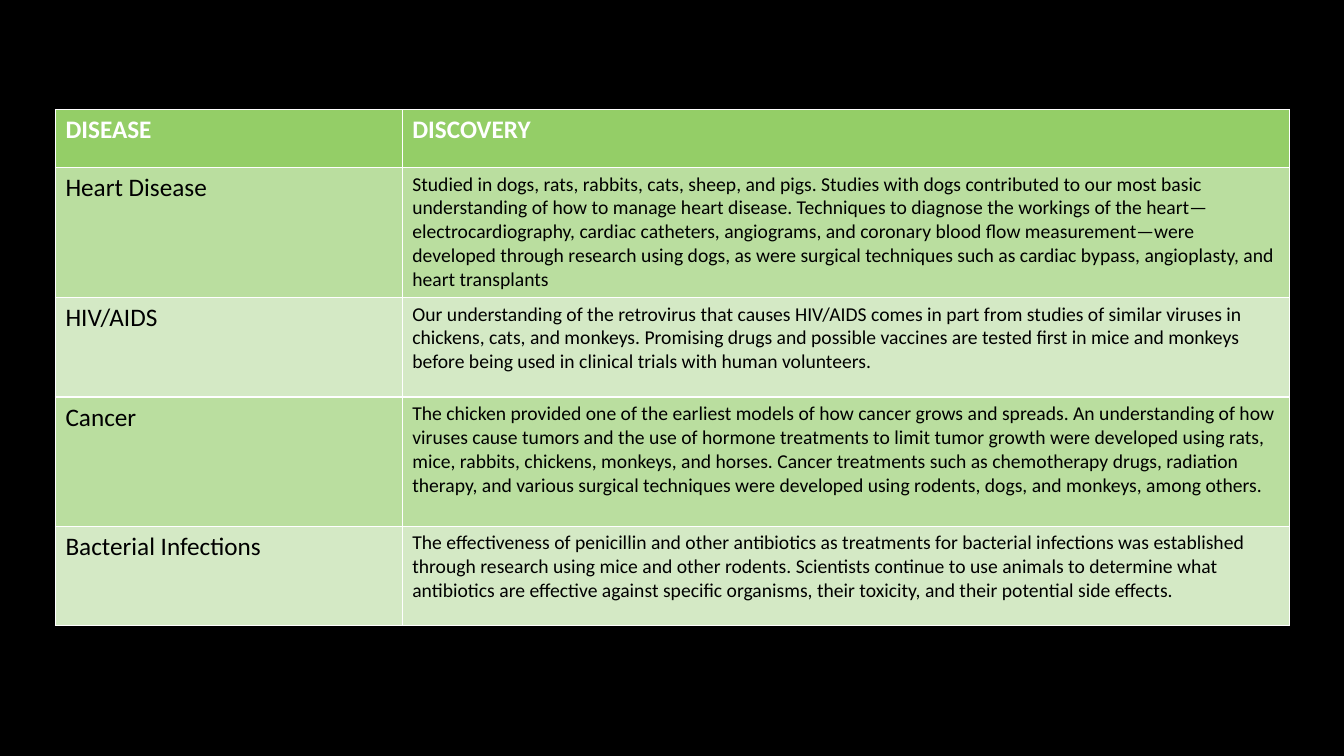
from pptx import Presentation
from pptx.dml.color import RGBColor
from pptx.oxml import parse_xml
from pptx.oxml.ns import nsdecls
from pptx.util import Inches, Pt

BLACK = RGBColor(0x00, 0x00, 0x00)
WHITE = RGBColor(0xFF, 0xFF, 0xFF)
HEADER_GREEN = RGBColor(0x94, 0xCE, 0x67)
BAND_GREEN = RGBColor(0xBA, 0xDE, 0x9F)
PALE_GREEN = RGBColor(0xD4, 0xE9, 0xC5)

COLUMN_WIDTHS = [3.44, 8.8]
ROW_HEIGHTS = [0.57, 1.29, 0.99, 1.28, 0.99]
ROWS = [
    ("DISEASE", "DISCOVERY"),
    ("Heart Disease",
     "Studied in dogs, rats, rabbits, cats, sheep, and pigs. Studies with dogs "
     "contributed to our most basic understanding of how to manage heart disease. "
     "Techniques to diagnose the workings of the heart—electrocardiography, cardiac "
     "catheters, angiograms, and coronary blood flow measurement—were developed "
     "through research using dogs, as were surgical techniques such as cardiac "
     "bypass, angioplasty, and heart transplants"),
    ("HIV/AIDS",
     "Our understanding of the retrovirus that causes HIV/AIDS comes in part from "
     "studies of similar viruses in chickens, cats, and monkeys. Promising drugs and "
     "possible vaccines are tested first in mice and monkeys before being used in "
     "clinical trials with human volunteers."),
    ("Cancer",
     "The chicken provided one of the earliest models of how cancer grows and "
     "spreads. An understanding of how viruses cause tumors and the use of hormone "
     "treatments to limit tumor growth were developed using rats, mice, rabbits, "
     "chickens, monkeys, and horses. Cancer treatments such as chemotherapy drugs, "
     "radiation therapy, and various surgical techniques were developed using "
     "rodents, dogs, and monkeys, among others."),
    ("Bacterial Infections",
     "The effectiveness of penicillin and other antibiotics as treatments for "
     "bacterial infections was established through research using mice and other "
     "rodents. Scientists continue to use animals to determine what antibiotics are "
     "effective against specific organisms, their toxicity, and their potential side "
     "effects."),
]


class SlideBuilder:
    font_name = "Calibri"
    label_size = Pt(18)
    body_size = Pt(14)
    border_width = Pt(1)

    def __init__(self, presentation):
        self.slide = presentation.slides.add_slide(presentation.slide_layouts[6])

    def background(self, color):
        fill = self.slide.background.fill
        fill.solid()
        fill.fore_color.rgb = color

    def borders(self, cell, sides):
        properties = cell._tc.get_or_add_tcPr()
        for side in sides:
            properties.append(parse_xml(
                f'<a:ln{side} {nsdecls("a")} w="{self.border_width}"><a:solidFill>'
                f'<a:srgbClr val="{WHITE}"/></a:solidFill></a:ln{side}>'))

    def cell(self, cell, text, fill, color, size, bold, sides):
        self.borders(cell, sides)
        cell.fill.solid()
        cell.fill.fore_color.rgb = fill
        cell.text_frame.text = text
        font = cell.text_frame.paragraphs[0].runs[0].font
        font.name, font.size, font.bold = self.font_name, size, bold
        font.color.rgb = color

    def table(self, left, top, widths, heights, rows):
        table = self.slide.shapes.add_table(
            len(rows), len(widths), Inches(left), Inches(top),
            Inches(sum(widths)), Inches(sum(heights))).table
        for column, width in zip(table.columns, widths):
            column.width = Inches(width)
        for row, height in zip(table.rows, heights):
            row.height = Inches(height)

        for i, texts in enumerate(rows):
            header = i == 0
            fill = HEADER_GREEN if header else BAND_GREEN if i % 2 else PALE_GREEN
            for j, text in enumerate(texts):
                size = self.label_size if header or j == 0 else self.body_size
                # Python order of sides follows the schema: left, right, top, bottom
                self.cell(table.cell(i, j), text, fill, WHITE if header else BLACK,
                          size, header, "LRTB")


def main():
    presentation = Presentation()
    presentation.slide_width = Inches(13.33)
    presentation.slide_height = Inches(7.5)

    builder = SlideBuilder(presentation)
    builder.background(BLACK)
    # Diseases and the discoveries made through animal research
    builder.table(0.55, 1.09, COLUMN_WIDTHS, ROW_HEIGHTS, ROWS)

    presentation.save("out.pptx")


if __name__ == "__main__":
    main()
